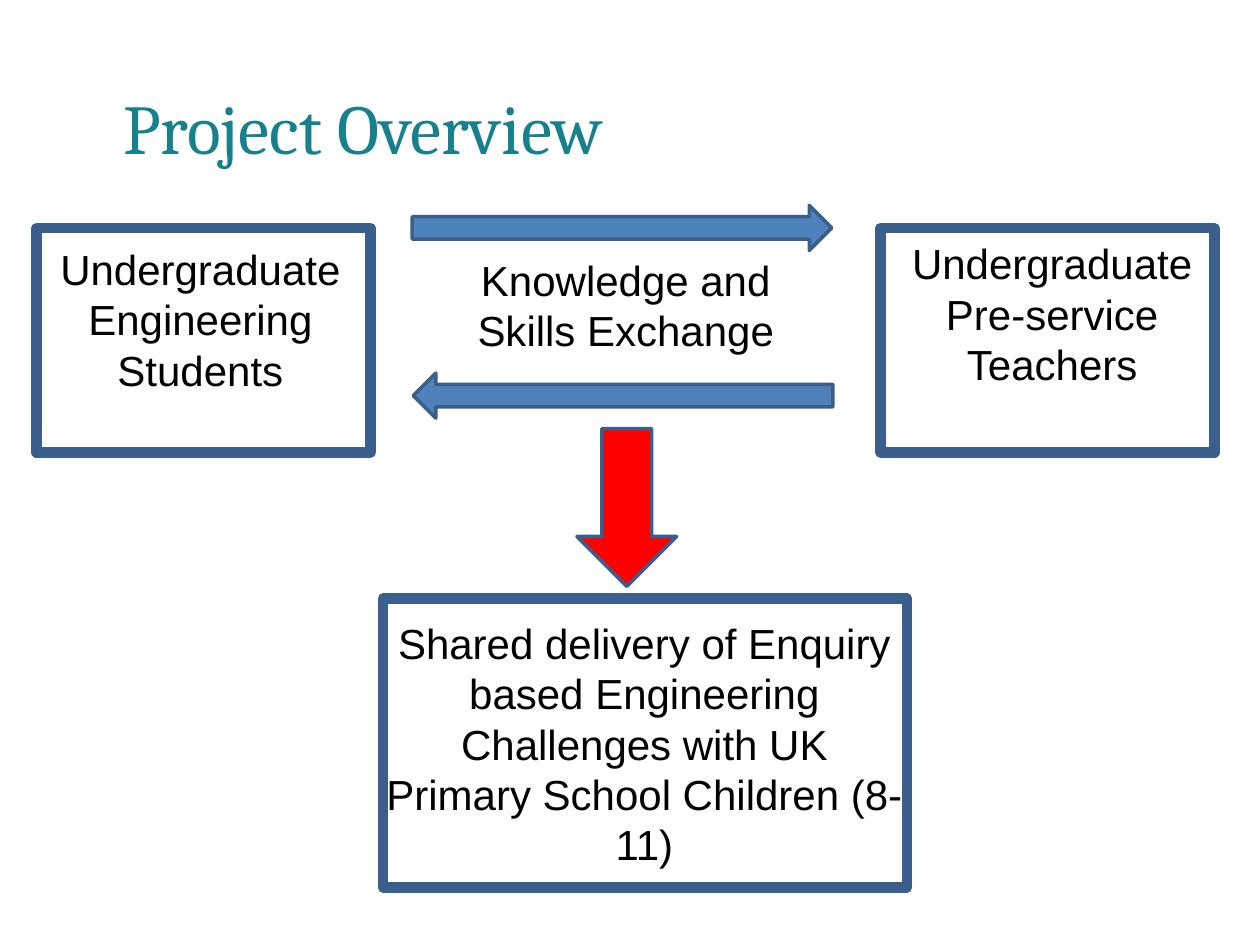
from pptx import Presentation
from pptx.dml.color import RGBColor
from pptx.enum.shapes import MSO_SHAPE as SHAPE
from pptx.enum.text import MSO_AUTO_SIZE as AUTO_SIZE, PP_ALIGN as ALIGN
from pptx.util import Cm, Pt

TEAL = RGBColor(0x16, 0x81, 0x8D)
BLUE = RGBColor(0x4F, 0x81, 0xBD)
DARK_BLUE = RGBColor(0x3A, 0x5F, 0x8C)
RED = RGBColor(0xFF, 0x00, 0x00)
BLACK = RGBColor(0x00, 0x00, 0x00)


def add_title(s, text, left, top, width, height):
    tf = s.shapes.add_textbox(Cm(left), Cm(top), Cm(width), Cm(height)).text_frame
    tf.word_wrap = True
    tf.margin_left = tf.margin_top = tf.margin_right = tf.margin_bottom = 0
    p = tf.paragraphs[0]
    p.text = text
    p.line_spacing = Pt(42)
    p.font.name, p.font.size = "Cambria", Pt(40)
    p.font.color.rgb = TEAL


def add_label(s, lines, left, top, width, height):
    tf = s.shapes.add_textbox(Cm(left), Cm(top), Cm(width), Cm(height)).text_frame
    tf.word_wrap = True
    tf.auto_size = AUTO_SIZE.SHAPE_TO_FIT_TEXT
    tf.text = "\n".join(lines)
    for p in tf.paragraphs:
        p.alignment = ALIGN.CENTER
        p.font.name, p.font.size = "Arial", Pt(24)
        p.font.color.rgb = BLACK


def add_outlined(s, kind, left, top, width, height, line_width, fill=None, rotation=0):
    sp = s.shapes.add_shape(kind, Cm(left), Cm(top), Cm(width), Cm(height))
    sp.shadow.inherit = False
    sp.rotation = rotation
    if fill is None:
        sp.fill.background()
    else:
        sp.fill.solid()
        sp.fill.fore_color.rgb = fill
    sp.line.color.rgb = DARK_BLUE
    sp.line.width = Pt(line_width)


def add_frame(s, left, top, width, height):
    add_outlined(s, SHAPE.RECTANGLE, left, top, width, height, 6)


def add_arrow(s, kind, left, top, width, height, fill, rotation=0):
    add_outlined(s, kind, left, top, width, height, 2, fill, rotation)


def main():
    prs = Presentation()
    prs.slide_width, prs.slide_height = Cm(25.4), Cm(19.05)
    s = prs.slides.add_slide(prs.slide_layouts[6])

    add_title(s, "Project Overview", 2.49, 1.91, 18.11, 1.8)

    # The two student groups
    for left in (0.74, 17.75):
        add_frame(s, left, 4.6, 6.73, 4.52)
    add_label(s, ["Undergraduate", "Engineering Students"], 0.74, 4.78, 6.6, 3.33)
    add_label(s, ["Undergraduate", "Pre-service Teachers"], 17.91, 4.67, 6.6, 3.33)

    # Exchange between the groups
    add_arrow(s, SHAPE.RIGHT_ARROW, 8.31, 4.14, 8.46, 0.91, BLUE)
    add_arrow(s, SHAPE.RIGHT_ARROW, 8.33, 7.52, 8.46, 0.91, BLUE, rotation=180)
    add_label(s, ["Knowledge and Skills Exchange"], 8.41, 5, 8.41, 2.31)

    # Shared outcome
    add_arrow(s, SHAPE.UP_ARROW, 11.63, 8.64, 2.01, 3.18, RED, rotation=180)
    add_label(s, ["Shared delivery of Enquiry based Engineering Challenges "
                  "with UK Primary School Children (8-11)"], 7.54, 12.32, 10.9, 5.38)
    add_frame(s, 7.72, 12.07, 10.57, 5.82)

    prs.save("out.pptx")


if __name__ == "__main__":
    main()
